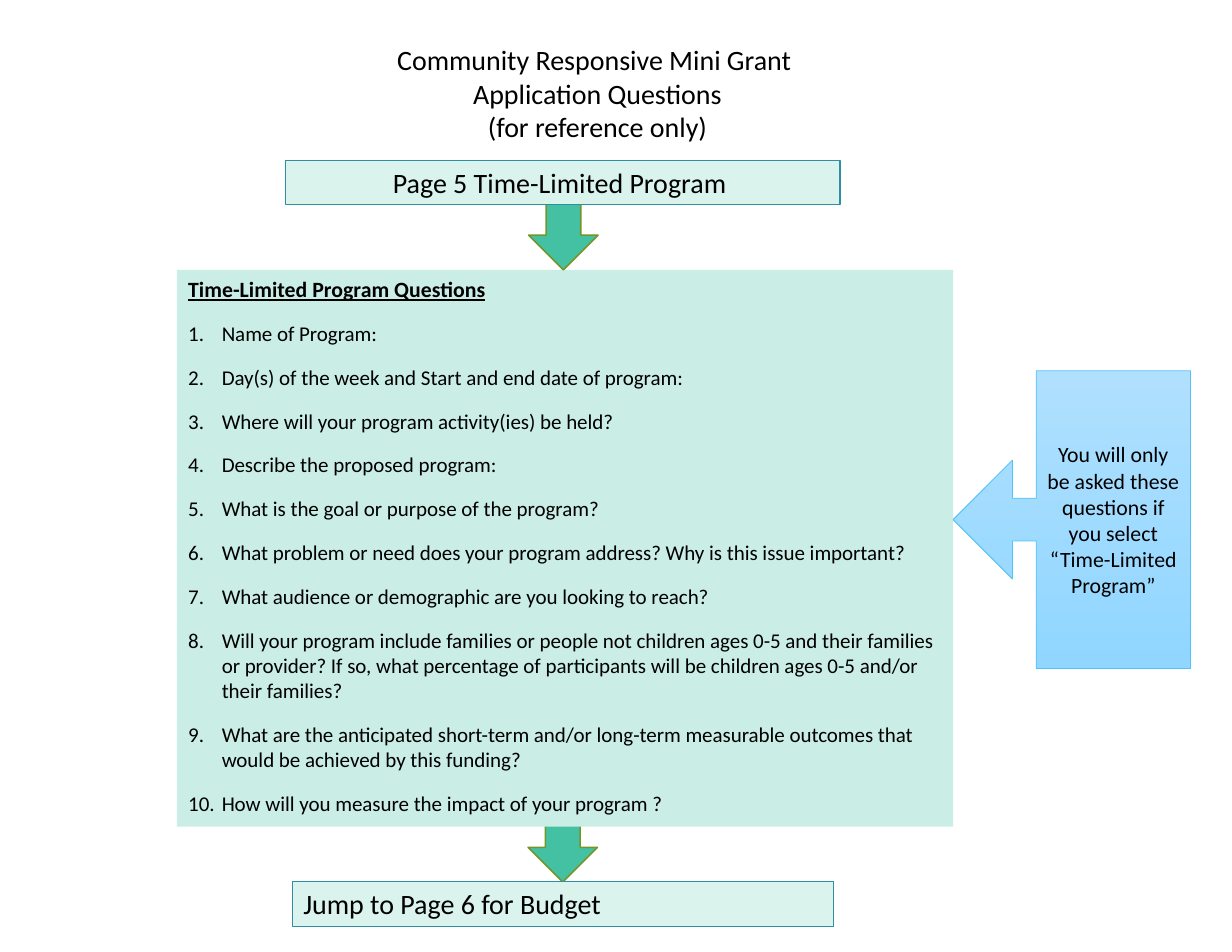
from lxml.etree import SubElement
from pptx import Presentation
from pptx.dml.color import RGBColor
from pptx.enum.shapes import MSO_SHAPE
from pptx.enum.text import MSO_ANCHOR, MSO_AUTO_SIZE, PP_ALIGN
from pptx.oxml.ns import qn
from pptx.util import Inches, Pt

COLORS = {
    "text": "000000",
    "panel": "CAEEE5",
    "banner": "DAF3ED",
    "banner_line": "2E8EA8",
    "arrow": "44C1A3",
    "arrow_line": "719629",
    "callout_top": "B0E0FE",
    "callout_bottom": "90D6FF",
    "callout_line": "51C3F9",
}
FONT = "Calibri"
TITLE = ["Community Responsive Mini Grant ", "Application Questions", "(for reference only)"]
HEADING = "Time-Limited Program Questions"
QUESTIONS = [
    "Name of Program:",
    "Day(s) of the week and Start and end date of program:",
    "Where will your program activity(ies) be held?",
    "Describe the proposed program:",
    "What is the goal or purpose of the program?",
    "What problem or need does your program address? Why is this issue important?",
    "What audience or demographic are you looking to reach?",
    "Will your program include families or people not children ages 0-5 and their families "
    "or provider? If so, what percentage of participants will be children ages 0-5 and/or "
    "their families?",
    "What are the anticipated short-term and/or long-term measurable outcomes that would be "
    "achieved by this funding?",
    "How will you measure the impact of your program ?",
]
CALLOUT = "You will only be asked these questions if you select “Time-Limited Program”"


def color(name):
    return RGBColor.from_string(COLORS[name])


def place(box, left, top, width, height):
    box.left, box.top = Inches(left), Inches(top)
    box.width, box.height = Inches(width), Inches(height)


def paint(box, fill, line, weight):
    box.shadow.inherit = False
    box.fill.solid()
    box.fill.fore_color.rgb = color(fill)
    box.line.color.rgb = color(line)
    box.line.width = Pt(weight)


def write(box, lines, size, align=PP_ALIGN.LEFT, anchor=MSO_ANCHOR.TOP, gap=0):
    """Fill a box with one paragraph per line, with equal gaps before and after."""
    frame = box.text_frame
    frame.text = "\n".join(lines)
    frame.word_wrap = True
    frame.auto_size = MSO_AUTO_SIZE.NONE
    frame.vertical_anchor = anchor
    for para in frame.paragraphs:
        para.alignment = align
        para.space_before = para.space_after = Pt(gap)
        for span in para.runs:
            span.font.name = FONT
            span.font.size = Pt(size)
            span.font.color.rgb = color("text")


def set_bullet(para, indent, numbered):
    properties = para._p.get_or_add_pPr()
    properties.set("marL", str(Inches(indent)))
    properties.set("indent", str(-Inches(indent)))
    if numbered:
        SubElement(properties, qn("a:buFont"), typeface=FONT)
        SubElement(properties, qn("a:buAutoNum"), type="arabicPeriod")
    else:
        SubElement(properties, qn("a:buNone"))


def fill_title(title):
    place(title, 2.86, 0.33, 4.95, 1.01)
    write(title, TITLE, 18, PP_ALIGN.CENTER)


def fill_questions(body):
    place(body, 1.58, 2.41, 6.93, 4.97)
    body.fill.solid()
    body.fill.fore_color.rgb = color("panel")
    write(body, [HEADING] + QUESTIONS, 13.5, gap=6)
    heading, *questions = body.text_frame.paragraphs
    set_bullet(heading, 0, numbered=False)
    font = heading.runs[0].font
    font.size, font.bold, font.underline = Pt(14), True, True
    for para in questions:
        set_bullet(para, 0.3, numbered=True)


def add_down_arrow(page, left, top, length):
    arrow = page.shapes.add_shape(
        MSO_SHAPE.RIGHT_ARROW, Inches(left), Inches(top), Inches(length), Inches(0.62))
    arrow.rotation = 90
    paint(arrow, "arrow", "arrow_line", 1)
    return arrow


def add_banner(page, left, top, width, text, align):
    banner = page.shapes.add_shape(
        MSO_SHAPE.RECTANGLE, Inches(left), Inches(top), Inches(width), Inches(0.4))
    paint(banner, "banner", "banner_line", 0.75)
    write(banner, [text], 18, align, gap=6)


def add_callout(page):
    callout = page.shapes.add_shape(
        MSO_SHAPE.LEFT_ARROW_CALLOUT, Inches(8.51), Inches(3.31), Inches(2.12), Inches(2.66))
    for index, value in enumerate((0.18, 0.25, 0.25, 0.65)):
        callout.adjustments[index] = value
    paint(callout, "callout_top", "callout_line", 0.5)
    callout.fill.gradient()
    callout.fill.gradient_angle = 270
    for stop, name in zip(callout.fill.gradient_stops, ("callout_top", "callout_bottom")):
        stop.color.rgb = color(name)
    write(callout, [CALLOUT], 14, PP_ALIGN.CENTER, MSO_ANCHOR.MIDDLE)


def main():
    deck = Presentation()
    deck.slide_width, deck.slide_height = Inches(11), Inches(8.5)
    page = deck.slides.add_slide(deck.slide_layouts[1])
    title, body = page.placeholders
    fill_title(title)
    fill_questions(body)
    lower_arrow = add_down_arrow(page, 4.4, 6.94, 1.25)
    body.element.addprevious(lower_arrow.element)  # the panel covers the arrow's tail
    add_down_arrow(page, 4.7, 1.77, 0.66)
    add_banner(page, 2.55, 1.43, 4.95, "Page 5 Time-Limited Program ", PP_ALIGN.CENTER)
    add_callout(page)
    add_banner(page, 2.61, 7.87, 4.83, "Jump to Page 6 for Budget", PP_ALIGN.LEFT)
    deck.save("out.pptx")


if __name__ == "__main__":
    main()
